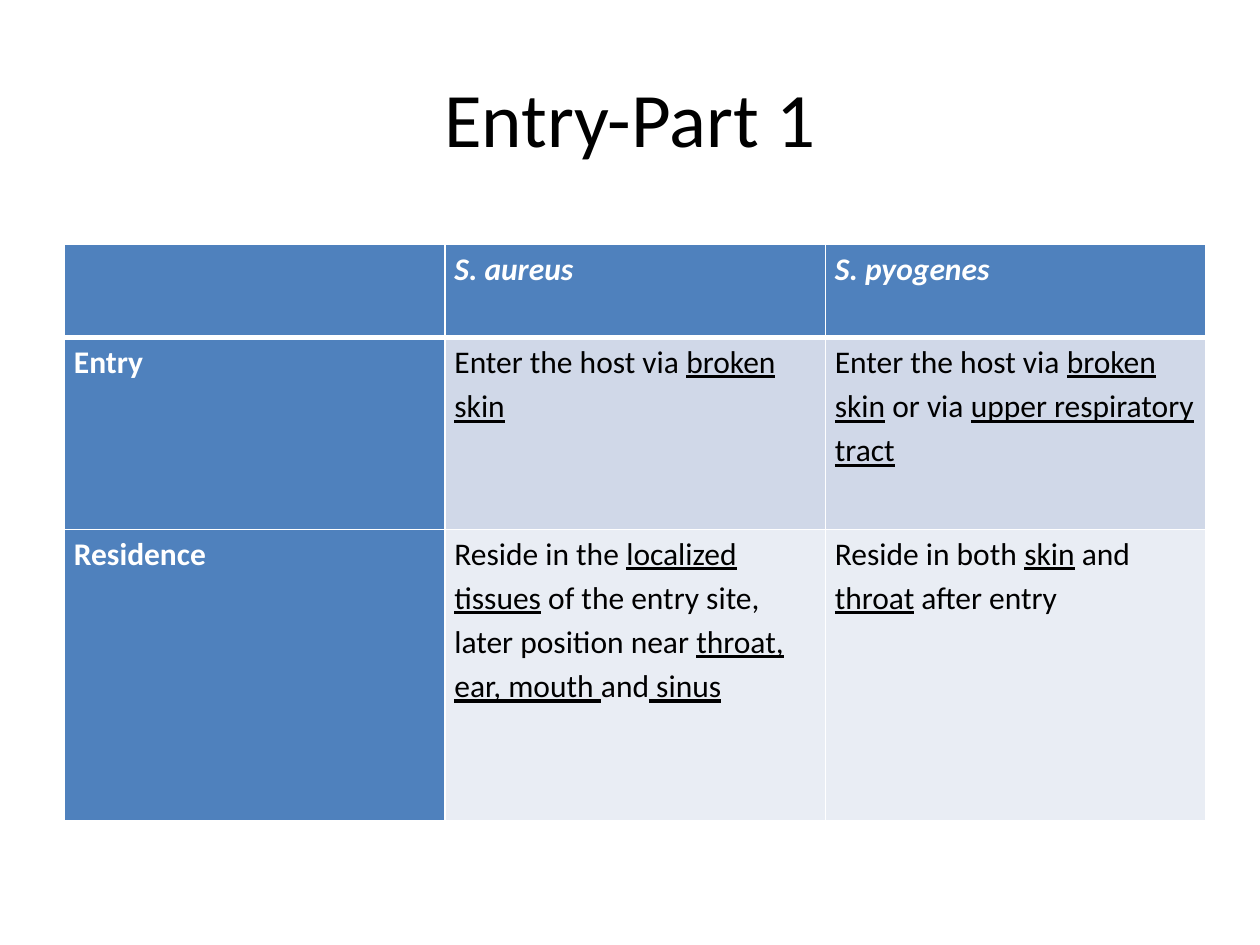
import pptx
import pptx.dml.color
import pptx.enum.text
import pptx.oxml
import pptx.oxml.ns
import pptx.util
from dataclasses import dataclass

Cm = pptx.util.Cm
Pt = pptx.util.Pt
Color = pptx.dml.color.RGBColor.from_string


@dataclass(frozen=True)
class Theme:
    font: str = "Calibri"
    title_size: int = 44
    table_size: int = 18
    dark: str = "000000"
    light: str = "FFFFFF"
    accent: str = "4F81BD"
    bands: tuple = ("D0D8E8", "E9EDF4")


theme = Theme()


def add_border(cell, side, points):
    """Draw one side (L, R, T or B) of a cell; call before setting its fill."""
    cell._tc.get_or_add_tcPr().append(pptx.oxml.parse_xml(
        f'<a:ln{side} {pptx.oxml.ns.nsdecls("a")} w="{Pt(points)}"><a:solidFill>'
        f'<a:srgbClr val="{theme.light}"/></a:solidFill></a:ln{side}>'))


deck = pptx.Presentation()
deck.slide_width, deck.slide_height = Cm(25.4), Cm(19.05)
page = deck.slides.add_slide(deck.slide_layouts[5])

title = page.shapes.title
title.left, title.top, title.width, title.height = Cm(1.27), Cm(0.76), Cm(22.86), Cm(3.18)
title.text_frame.text = "Entry-Part 1"
title.text_frame.vertical_anchor = pptx.enum.text.MSO_ANCHOR.MIDDLE
heading = title.text_frame.paragraphs[0]
heading.alignment = pptx.enum.text.PP_ALIGN.CENTER
heading.font.name = theme.font
heading.font.size = Pt(theme.title_size)
heading.font.color.rgb = Color(theme.dark)

# Underscores enclose underlined words.
rows = [
    ["", "S. aureus", "S. pyogenes"],
    ["Entry",
     "Enter the host via _broken skin_",
     "Enter the host via _broken skin_ or via _upper respiratory tract_"],
    ["Residence",
     "Reside in the _localized tissues_ of the entry site, later position near "
     "_throat, ear, mouth _and_ sinus_",
     "Reside in both _skin_ and _throat_ after entry"],
]
row_heights = [Cm(1.88), Cm(3.86), Cm(5.87)]
column_width = Cm(7.67)

table = page.shapes.add_table(
    len(rows), 3, Cm(1.3), Cm(4.93), 3 * column_width, sum(row_heights)).table
table.first_row = True
table.first_col = True
for column in table.columns:
    column.width = column_width

for row_index, texts in enumerate(rows):
    table.rows[row_index].height = row_heights[row_index]
    for column_index, text in enumerate(texts):
        cell = table.cell(row_index, column_index)
        is_header = row_index == 0
        is_label = is_header or column_index == 0

        add_border(cell, "L", 1)
        add_border(cell, "R", 1)
        add_border(cell, "T", 3 if row_index == 1 else 1)
        add_border(cell, "B", 3 if is_header else 1)
        cell.fill.solid()
        cell.fill.fore_color.rgb = Color(theme.accent if is_label else theme.bands[row_index - 1])
        cell.margin_left = cell.margin_right = Cm(0.19)
        cell.margin_top = cell.margin_bottom = 0

        para = cell.text_frame.paragraphs[0]
        para.line_spacing = 1.15
        para.font.name = theme.font
        para.font.size = Pt(theme.table_size)
        para.font.bold = is_label
        para.font.italic = is_header
        para.font.color.rgb = Color(theme.light if is_label else theme.dark)
        for part_index, part in enumerate(text.split("_")):
            if part:
                span = para.add_run()
                span.text = part
                if part_index % 2:
                    span.font.underline = True

deck.save("out.pptx")
